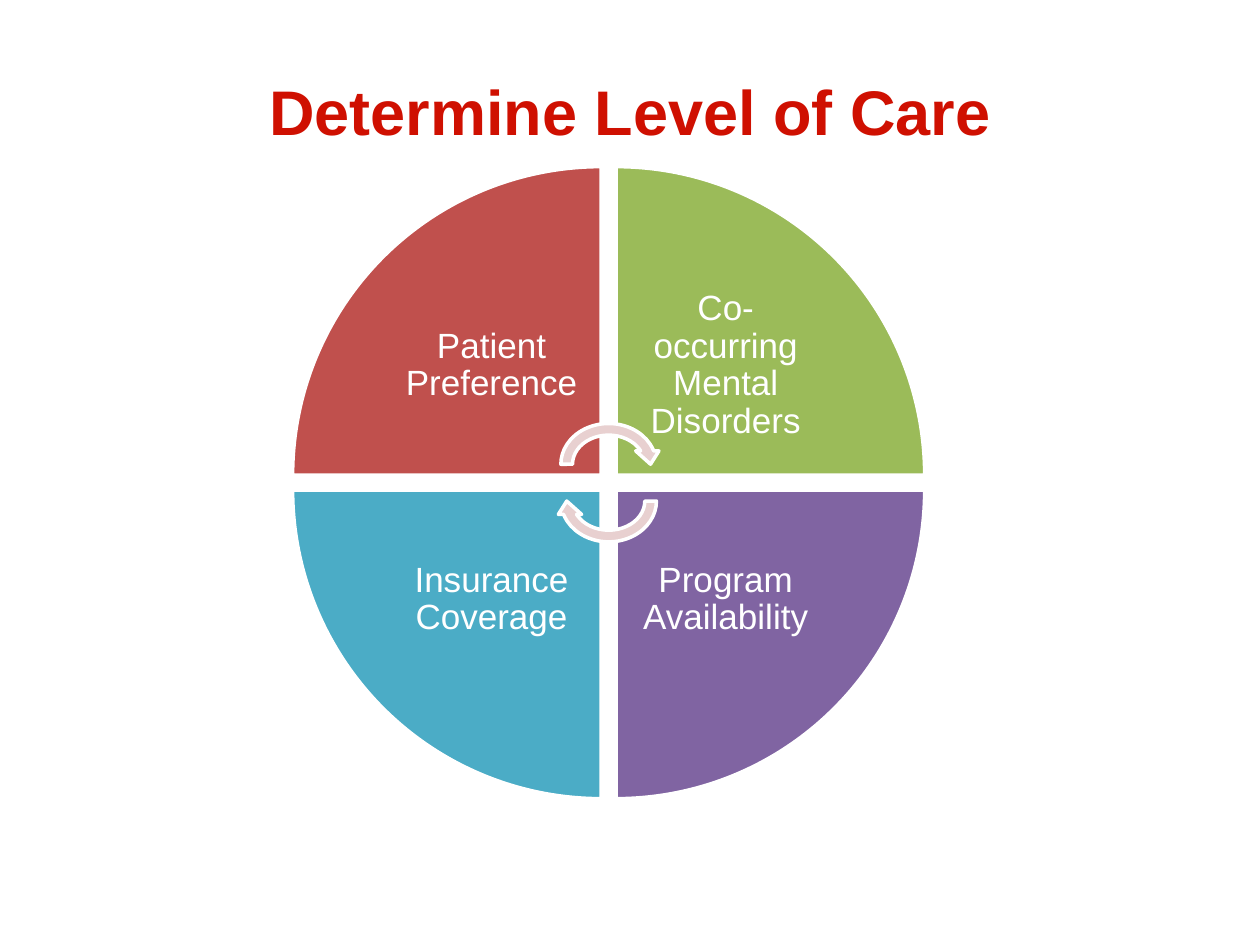
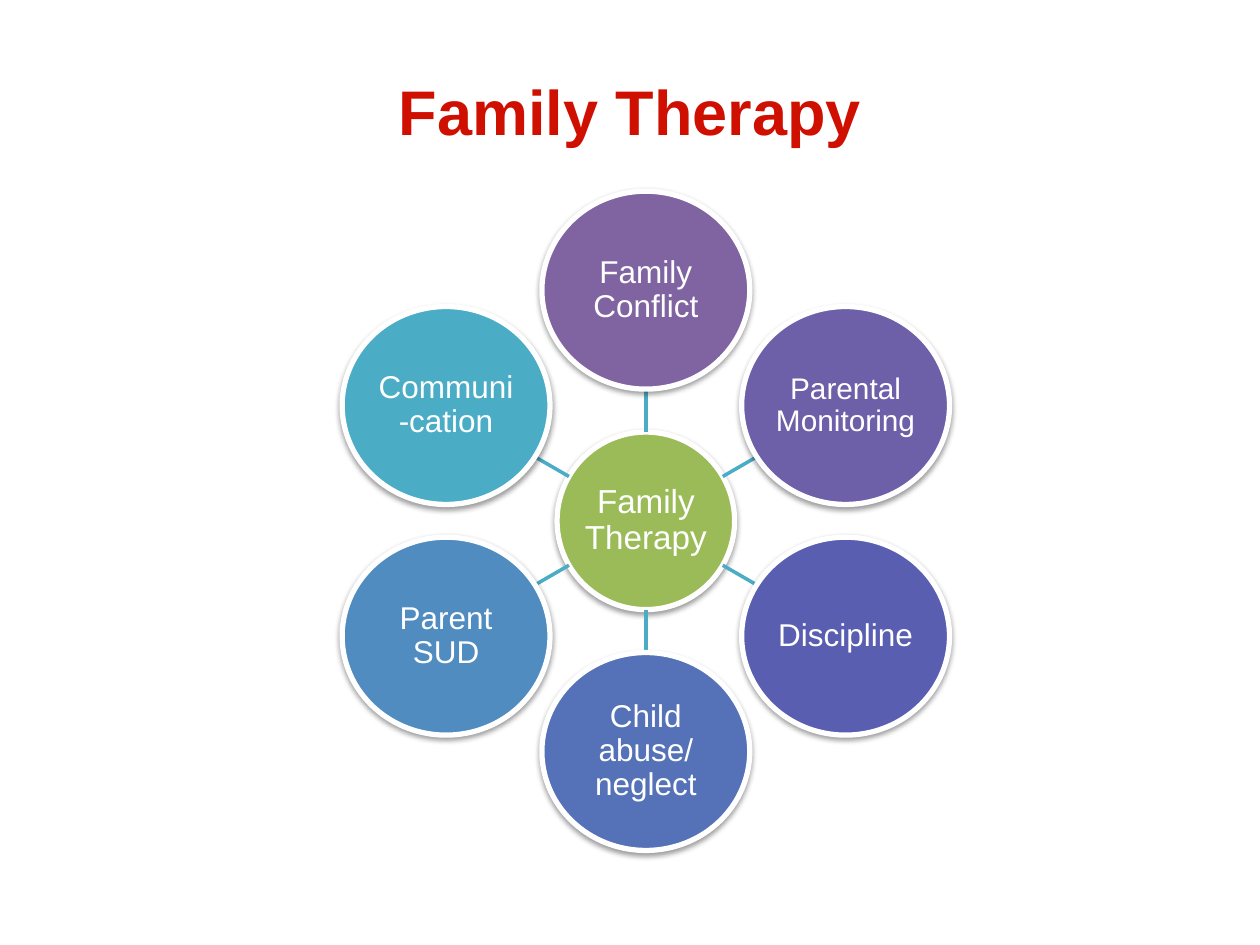
import math

from lxml import etree
from pptx import Presentation
from pptx import util as u
from pptx.dml.color import RGBColor
from pptx.enum import shapes, text
from pptx.oxml import ns

WHITE = RGBColor(0xFF, 0xFF, 0xFF)
TITLE_RED = RGBColor(0xCF, 0x10, 0x01)
RED = RGBColor(0xC0, 0x50, 0x4D)
GREEN = RGBColor(0x9B, 0xBB, 0x59)
PURPLE = RGBColor(0x80, 0x64, 0xA2)
VIOLET = RGBColor(0x6E, 0x5F, 0xA9)
INDIGO = RGBColor(0x5A, 0x5E, 0xB1)
BLUE = RGBColor(0x55, 0x72, 0xB8)
SKY = RGBColor(0x50, 0x8C, 0xBF)
AQUA = RGBColor(0x4B, 0xAC, 0xC6)
PINK = RGBColor(0xE8, 0xD0, 0xD0)

TITLE_PLACE = {"left": u.Cm(1.27), "top": u.Cm(0.64), "width": u.Cm(22.86), "height": u.Cm(3.18)}
TITLE_FONT = {"name": "Arial", "size": u.Pt(36), "bold": True}
SHADOW = {"blurRad": "40000", "dist": "20000", "dir": "5400000", "rotWithShape": "0"}


def add_figure(slide, kind, x, y, width, height, color, line_width, rotation=0, shadow=False):
    shape = slide.shapes.add_shape(
        kind, u.Cm(x - width / 2), u.Cm(y - height / 2), u.Cm(width), u.Cm(height))
    shape.rotation = rotation
    shape.fill.solid()
    shape.fill.fore_color.rgb = color
    shape.line.color.rgb = WHITE
    shape.line.width = u.Pt(line_width)
    shape.shadow.inherit = False
    if shadow:
        effects = shape.element.spPr.find(ns.qn("a:effectLst"))
        outer = etree.SubElement(effects, ns.qn("a:outerShdw"), SHADOW)
        black = etree.SubElement(outer, ns.qn("a:srgbClr"), val="000000")
        etree.SubElement(black, ns.qn("a:alpha"), val="38000")


def add_label(slide, words, x, y, width, height, size, inset):
    box = slide.shapes.add_textbox(
        u.Cm(x - width / 2), u.Cm(y - height / 2), u.Cm(width), u.Cm(height))
    frame = box.text_frame
    frame_format = {"word_wrap": True, "vertical_anchor": text.MSO_ANCHOR.MIDDLE}
    for side in ("left", "right", "top", "bottom"):
        frame_format[f"margin_{side}"] = u.Cm(inset)
    for name, value in frame_format.items():
        setattr(frame, name, value)
    paragraph = frame.paragraphs[0]
    paragraph.text = words
    paragraph.alignment = text.PP_ALIGN.CENTER
    paragraph.line_spacing = 0.9
    font = paragraph.runs[0].font
    for name, value in {"name": "Arial", "size": u.Pt(size)}.items():
        setattr(font, name, value)
    font.color.rgb = WHITE


presentation = Presentation()
presentation.slide_width = u.Cm(25.4)
presentation.slide_height = u.Cm(19.05)

slides = []
for heading in ("Determine Level of Care", "Family Therapy"):
    slide = presentation.slides.add_slide(presentation.slide_layouts[5])
    title = slide.shapes.title
    for name, value in TITLE_PLACE.items():
        setattr(title, name, value)
    title.text_frame.text = heading
    title.text_frame.vertical_anchor = text.MSO_ANCHOR.MIDDLE
    paragraph = title.text_frame.paragraphs[0]
    paragraph.alignment = text.PP_ALIGN.CENTER
    font = paragraph.runs[0].font
    for name, value in TITLE_FONT.items():
        setattr(font, name, value)
    font.color.rgb = TITLE_RED
    slides.append(slide)
care_slide, family_slide = slides

WHEEL_X, WHEEL_Y = 12.27, 9.73
HALF_GAP = 0.15
WEDGE = 6.22
WEDGE_TEXT = 4.42
quadrants = [
    ("Patient Preference", RED, -1, -1),
    ("Co-occurring Mental Disorders", GREEN, 1, -1),
    ("Program Availability", PURPLE, 1, 1),
    ("Insurance Coverage", AQUA, -1, 1),
]
for index, (words, color, across, down) in enumerate(quadrants):
    wedge_offset = HALF_GAP + WEDGE / 2
    text_offset = HALF_GAP + WEDGE_TEXT / 2
    add_figure(care_slide, shapes.MSO_SHAPE.PIE_WEDGE,
               WHEEL_X + across * wedge_offset, WHEEL_Y + down * wedge_offset,
               WEDGE, WEDGE, color, 2, rotation=90 * index)
    add_label(care_slide, words,
              WHEEL_X + across * text_offset, WHEEL_Y + down * text_offset,
              WEDGE_TEXT, WEDGE_TEXT, 20, 0.4)
for down, rotation in ((-1, 0), (1, 180)):
    add_figure(care_slide, shapes.MSO_SHAPE.CIRCULAR_ARROW, WHEEL_X, WHEEL_Y + down * 0.37,
               2.16, 1.88, PINK, 2, rotation=rotation)

HUB_X, HUB_Y = 13.02, 10.5
HUB = 3.58
ORBIT = 4.65
SPOKE_END = 2.62
add_figure(family_slide, shapes.MSO_SHAPE.OVAL, HUB_X, HUB_Y, HUB, HUB, GREEN, 3, shadow=True)
add_label(family_slide, "Family Therapy", HUB_X, HUB_Y, 2.54, 2.54, 19, 0.03)
petals = [
    ("Family Conflict", PURPLE, 18),
    ("Parental Monitoring", VIOLET, 17),
    ("Discipline", INDIGO, 18),
    ("Child abuse/ neglect", BLUE, 18),
    ("Parent SUD", SKY, 18),
    ("Communi-cation", AQUA, 18),
]
for index, (words, color, size) in enumerate(petals):
    angle = math.tau * index / len(petals)
    across, down = math.sin(angle), -math.cos(angle)
    spoke = family_slide.shapes.add_connector(
        shapes.MSO_CONNECTOR.STRAIGHT,
        u.Cm(HUB_X + across * HUB / 2), u.Cm(HUB_Y + down * HUB / 2),
        u.Cm(HUB_X + across * SPOKE_END), u.Cm(HUB_Y + down * SPOKE_END))
    spoke.line.color.rgb = AQUA
    spoke.line.width = u.Pt(2)
    etree.SubElement(spoke.element.spPr, ns.qn("a:effectLst"))
    x, y = HUB_X + across * ORBIT, HUB_Y + down * ORBIT
    add_figure(family_slide, shapes.MSO_SHAPE.OVAL, x, y, 4.19, 3.99, color, 3, shadow=True)
    add_label(family_slide, words, x, y, 2.95, 2.82, size, 0.03)

presentation.save("out.pptx")
